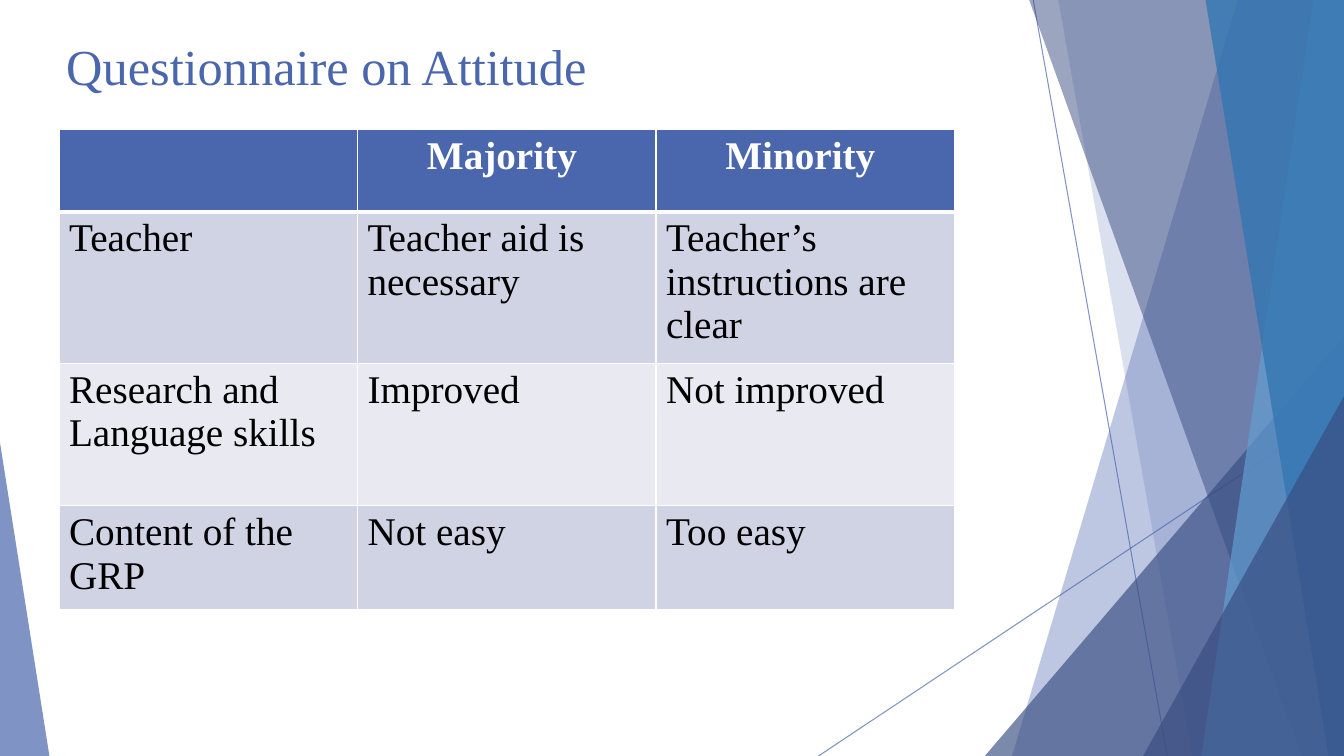
import pptx
import pptx.dml.color
import pptx.enum.shapes
import pptx.enum.text
import pptx.oxml
import pptx.oxml.ns
import pptx.util
from lxml import etree

RGBColor = pptx.dml.color.RGBColor
ALIGN = pptx.enum.text.PP_ALIGN

WIDTH = pptx.util.Inches(13.333)
HEIGHT = pptx.util.Inches(7.5)
FONT = "Times New Roman"

WHITE = RGBColor(0xFF, 0xFF, 0xFF)
BLACK = RGBColor(0x00, 0x00, 0x00)
BLUE = RGBColor(0x4A, 0x66, 0xAC)
NAVY = RGBColor(0x38, 0x4C, 0x81)
SKY = RGBColor(0x62, 0x9D, 0xD1)
OCEAN = RGBColor(0x34, 0x77, 0xB2)
ROW_DARK = RGBColor(0xD0, 0xD3, 0xE3)
ROW_LIGHT = RGBColor(0xE9, 0xEA, 0xF1)

ROWS = [
    ["", "Majority ", "Minority "],
    ["Teacher", "Teacher aid is necessary", "Teacher’s instructions are clear"],
    ["Research and Language skills", "Improved", "Not improved"],
    ["Content of the GRP", "Not easy", "Too easy"],
]
ROW_HEIGHTS = [10.9, 18.84, 18.84, 10.9]
COLUMN_WIDTH = 22.21


def across(percent):
    """Length as a percentage of the slide's width."""
    return round(WIDTH * percent / 100)


def down(percent):
    """Length as a percentage of the slide's height."""
    return round(HEIGHT * percent / 100)


def set_opacity(color_format, percent):
    color = color_format._xFill.find(pptx.oxml.ns.qn("a:srgbClr"))
    etree.SubElement(color, pptx.oxml.ns.qn("a:alpha"), val=str(percent * 1000))


def paint(shape, color, opacity):
    shape.shadow.inherit = False
    shape.line.fill.background()
    shape.fill.solid()
    shape.fill.fore_color.rgb = color
    set_opacity(shape.fill.fore_color, opacity)


def add_ray(page, start, end):
    ray = page.shapes.add_connector(
        pptx.enum.shapes.MSO_CONNECTOR.STRAIGHT,
        across(start[0]), down(start[1]), across(end[0]), down(end[1]))
    ray.line.width = pptx.util.Pt(0.75)
    ray.line.color.rgb = BLUE
    set_opacity(ray.line.fill.fore_color, 70)
    etree.SubElement(ray._element.spPr, pptx.oxml.ns.qn("a:effectLst"))


def add_band(page, top_left, bottom_left, color, opacity):
    """Full-height band from a slanted left side to the slide's right edge."""
    builder = page.shapes.build_freeform(across(top_left), 0)
    builder.add_line_segments(
        [(WIDTH, 0), (WIDTH, HEIGHT), (across(bottom_left), HEIGHT)], close=True)
    paint(builder.convert_to_shape(), color, opacity)


def add_corner(page, left, right, top, apex, color, opacity):
    """Right triangle that stands on the slide's bottom edge."""
    corner = page.shapes.add_shape(
        pptx.enum.shapes.MSO_SHAPE.ISOSCELES_TRIANGLE,
        across(left), down(top), across(right - left), down(100 - top))
    corner.adjustments[0] = apex
    paint(corner, color, opacity)


def write(frame, text, size, color, bold=False, align=ALIGN.LEFT):
    frame.word_wrap = True
    para = frame.paragraphs[0]
    para.text = text
    para.alignment = align
    para.font.name = FONT
    para.font.size = pptx.util.Pt(size)
    para.font.bold = bold
    para.font.color.rgb = color


def add_title(page, text):
    box = page.shapes.add_textbox(across(-10.95), down(3.33), across(70.5), down(19.2))
    box.text_frame.margin_top = pptx.util.Inches(0.1)
    write(box.text_frame, text, 36, BLUE, align=ALIGN.CENTER)


def add_borders(cell, top, bottom):
    properties = cell._tc.get_or_add_tcPr()
    for side, points in (("L", 1), ("R", 1), ("T", top), ("B", bottom)):
        properties.append(pptx.oxml.parse_xml(
            f'<a:ln{side} {pptx.oxml.ns.nsdecls("a")} w="{pptx.util.Pt(points)}">'
            f'<a:solidFill><a:srgbClr val="{WHITE}"/></a:solidFill></a:ln{side}>'))


def add_answers(page):
    table = page.shapes.add_table(
        len(ROWS), len(ROWS[0]), across(4.39), down(17.13),
        across(COLUMN_WIDTH * len(ROWS[0])), down(sum(ROW_HEIGHTS))).table
    for column in table.columns:
        column.width = across(COLUMN_WIDTH)
    for index, (texts, height) in enumerate(zip(ROWS, ROW_HEIGHTS)):
        table.rows[index].height = down(height)
        header = index == 0
        fill = BLUE if header else ROW_DARK if index % 2 else ROW_LIGHT
        for cell, text in zip(table.rows[index].cells, texts):
            add_borders(cell, top=3 if index == 1 else 1, bottom=3 if header else 1)
            cell.fill.solid()
            cell.fill.fore_color.rgb = fill
            write(cell.text_frame, text, 28, WHITE if header else BLACK,
                  bold=header, align=ALIGN.CENTER if header else ALIGN.LEFT)


def main():
    deck = pptx.Presentation()
    deck.slide_width, deck.slide_height = WIDTH, HEIGHT
    page = deck.slides.add_slide(deck.slide_layouts[6])

    # Facets on the right, back to front
    add_ray(page, (76.88, 0), (86.85, 100))
    add_ray(page, (100, 53.73), (60.9, 100))
    add_band(page, 92.1, 75.3, BLUE, 36)
    add_band(page, 78.75, 88.73, BLUE, 20)
    add_corner(page, 73.28, 100, 44.4, 1, NAVY, 66)
    add_band(page, 76.58, 96.83, NAVY, 50)
    add_band(page, 97.73, 89.4, SKY, 70)
    add_band(page, 89.7, 98.85, OCEAN, 80)
    add_corner(page, 85.05, 100, 52.4, 1, NAVY, 66)

    # Facet on the left
    add_corner(page, 0, 3.68, 58.53, 0, BLUE, 70)

    # Content
    add_title(page, "Questionnaire on Attitude")
    add_answers(page)

    deck.save("out.pptx")


if __name__ == "__main__":
    main()
